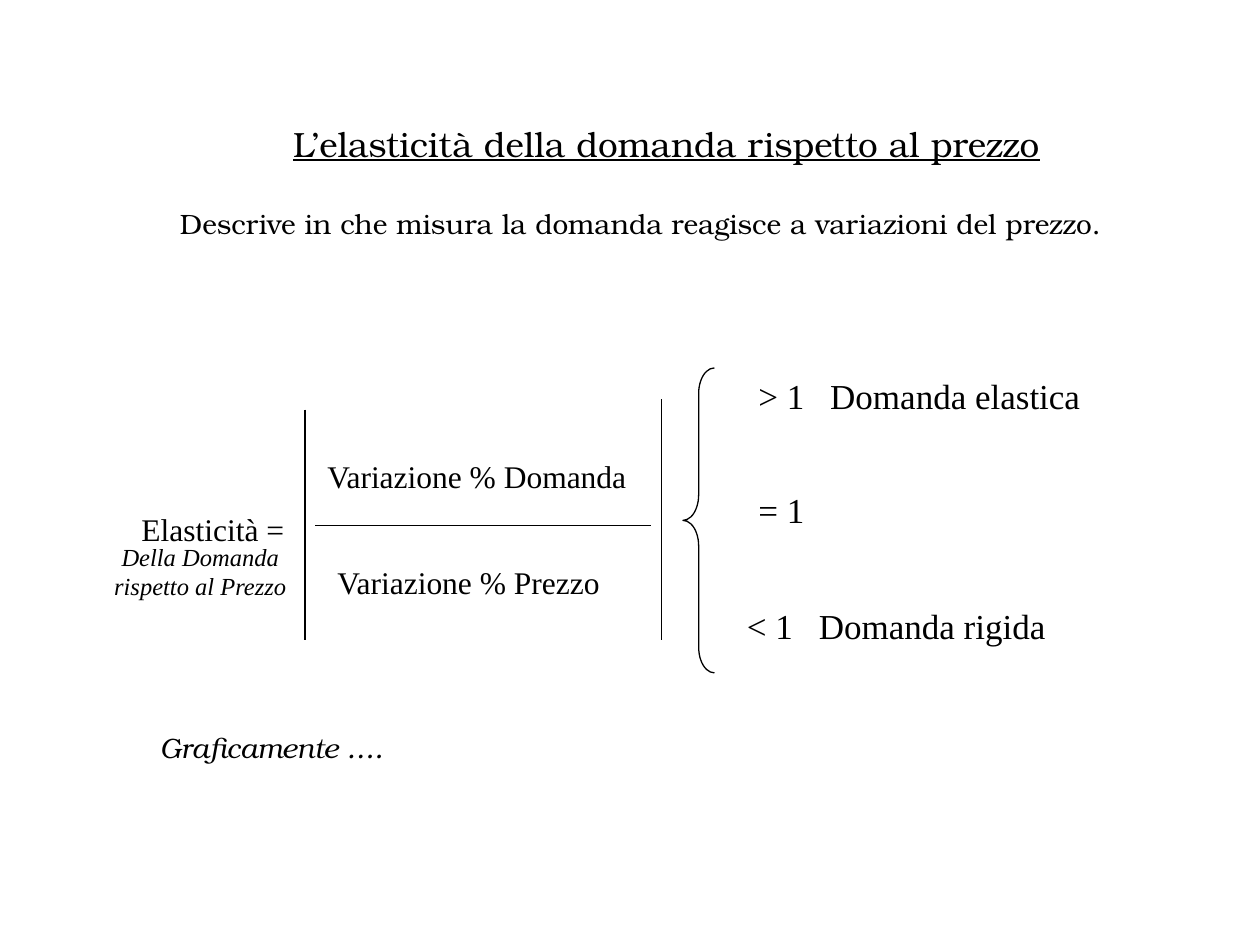
from dataclasses import dataclass

from lxml import etree
from pptx import Presentation
from pptx.dml.color import RGBColor
from pptx.enum import shapes, text
from pptx.oxml import ns
from pptx.util import Inches, Pt

BLACK = RGBColor(0, 0, 0)
WHITE = RGBColor(255, 255, 255)
SERIF = "Times New Roman"
BOOKISH = "TeX Gyre Bonum"
LINE_WIDTH = Pt(0.75)
VERDICT_TAB = Inches(0.57)


@dataclass(frozen=True)
class Line:
    """One paragraph of text with its format."""
    words: str
    size: float = 18
    font: str = SERIF
    italic: bool = False
    underline: bool = False
    centred: bool = False
    space_after: float = 0
    tab: int = 0


@dataclass(frozen=True)
class Rule:
    """A straight line between two points, in inches."""
    x1: float
    y1: float
    x2: float
    y2: float


RULES = [
    Rule(2.5, 4.17, 5.17, 4.17),    # fraction bar
    Rule(2.42, 3.25, 2.42, 5.08),   # absolute value, left
    Rule(5.25, 3.17, 5.25, 5.08),   # absolute value, right
]


def add_tab_stop(para, position: int) -> None:
    stops = etree.SubElement(para._p.get_or_add_pPr(), ns.qn("a:tabLst"))
    etree.SubElement(stops, ns.qn("a:tab"), pos=str(position), algn="l")


def add_text(page, left: float, top: float, width: float, height: float,
             *lines: Line, wrap: bool = False) -> None:
    box = page.shapes.add_textbox(Inches(left), Inches(top), Inches(width), Inches(height))
    frame = box.text_frame
    frame.word_wrap = wrap
    frame.auto_size = text.MSO_AUTO_SIZE.SHAPE_TO_FIT_TEXT
    for index, line in enumerate(lines):
        para = frame.add_paragraph() if index else frame.paragraphs[0]
        para.alignment = text.PP_ALIGN.CENTER if line.centred else text.PP_ALIGN.LEFT
        if line.space_after:
            para.space_after = Pt(line.space_after)
        if line.tab:
            add_tab_stop(para, line.tab)
        span = para.add_run()
        span.text = line.words
        span.font.name = line.font
        span.font.size = Pt(line.size)
        span.font.italic = line.italic
        span.font.underline = line.underline
        span.font.color.rgb = BLACK


def add_rule(page, rule: Rule) -> None:
    line = page.shapes.add_connector(
        shapes.MSO_CONNECTOR.STRAIGHT,
        Inches(rule.x1), Inches(rule.y1), Inches(rule.x2), Inches(rule.y2))
    line.line.color.rgb = BLACK
    line.line.width = LINE_WIDTH
    etree.SubElement(line._element.spPr, ns.qn("a:effectLst"))


def add_brace(page, left: float, top: float, width: float, height: float) -> None:
    brace = page.shapes.add_shape(
        shapes.MSO_SHAPE.LEFT_BRACE,
        Inches(left), Inches(top), Inches(width), Inches(height))
    brace.adjustments[0] = 0.81
    brace.adjustments[1] = 0.5
    brace.shadow.inherit = False
    brace.fill.background()
    brace.line.color.rgb = BLACK
    brace.line.width = LINE_WIDTH


def main() -> None:
    deck = Presentation()
    deck.slide_width, deck.slide_height = Inches(10), Inches(7.5)
    page = deck.slides.add_slide(deck.slide_layouts[6])
    page.background.fill.solid()
    page.background.fill.fore_color.rgb = WHITE

    add_text(page, 1.33, 0.92, 7.92, 1.03,
             Line("L’elasticità della domanda rispetto al prezzo", 20, BOOKISH,
                  underline=True, centred=True, space_after=24),
             Line("Descrive in che misura la domanda reagisce a variazioni del prezzo.",
                  16, BOOKISH),
             wrap=True)

    add_text(page, 2.5, 3.58, 2.6, 0.4, Line("Variazione % Domanda"))
    add_text(page, 2.58, 4.42, 2.31, 0.4, Line("Variazione % Prezzo"))
    add_text(page, 1.02, 4, 1.34, 0.4, Line("Elasticità =", centred=True))
    add_text(page, 0.75, 4.25, 1.68, 0.57,
             *(Line(words, 14, italic=True, centred=True)
               for words in ("Della Domanda", "rispetto al Prezzo")),
             wrap=True)
    for rule in RULES:
        add_rule(page, rule)

    add_brace(page, 5.42, 2.92, 0.25, 2.42)
    add_text(page, 5.92, 2.92, 2.92, 0.43,
             Line("> 1\tDomanda elastica", 20, tab=VERDICT_TAB), wrap=True)
    add_text(page, 5.92, 3.83, 0.57, 0.43, Line("= 1", 20))
    add_text(page, 5.83, 4.75, 2.67, 0.43,
             Line("< 1\tDomanda rigida", 20, tab=VERDICT_TAB), wrap=True)

    add_text(page, 1.17, 5.75, 1.98, 0.37, Line("Graficamente ….", 16, BOOKISH, italic=True))
    deck.save("out.pptx")


if __name__ == "__main__":
    main()
